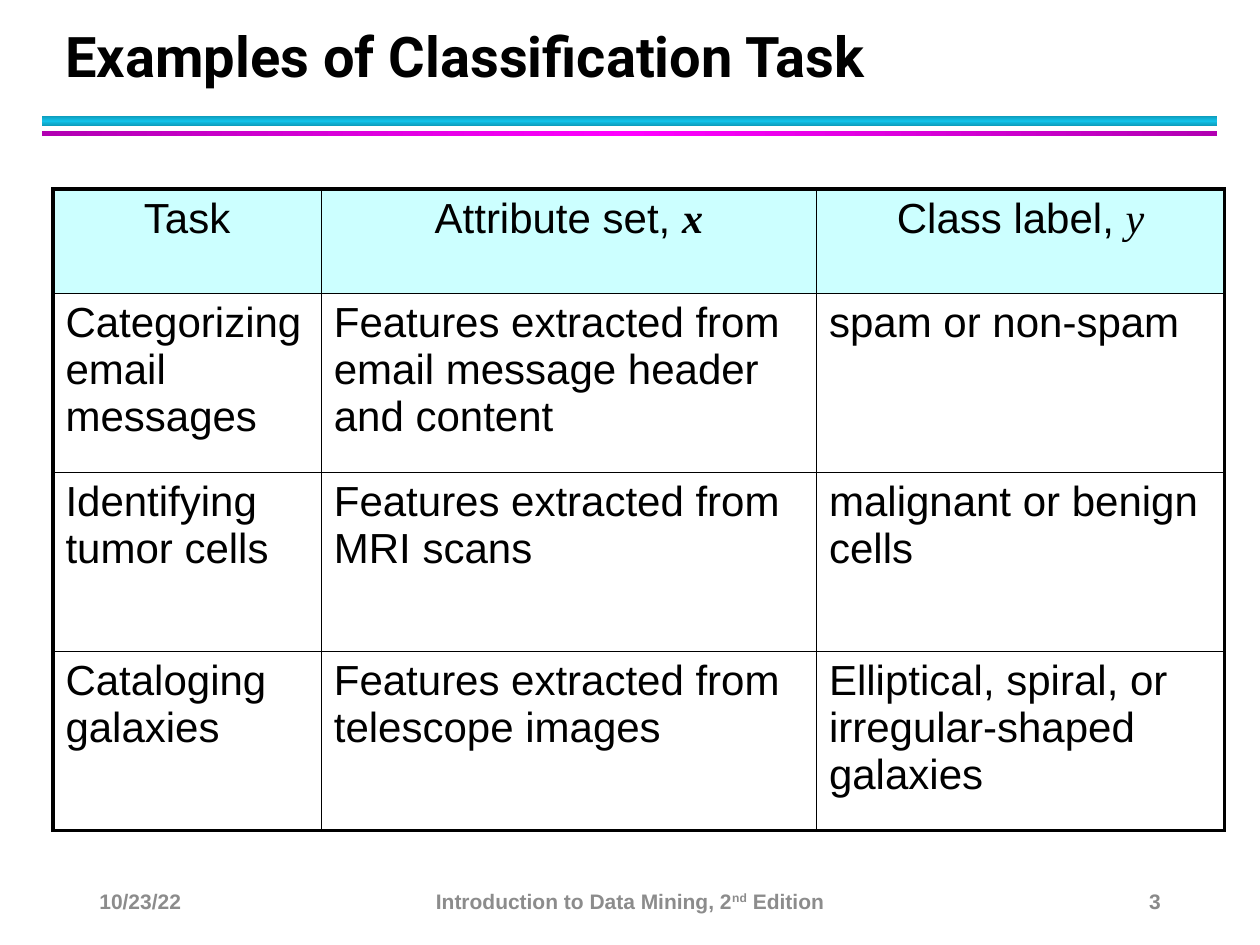
import copy

import pptx
import pptx.dml.color
import pptx.enum.shapes
import pptx.enum.text
import pptx.oxml
import pptx.oxml.ns
import pptx.util

ALIGN = pptx.enum.text.PP_ALIGN
ANCHOR = pptx.enum.text.MSO_ANCHOR
Inches, Pt = pptx.util.Inches, pptx.util.Pt

prs = pptx.Presentation()
prs.slide_width, prs.slide_height = Inches(10), Inches(7.5)
s = prs.slides.add_slide(prs.slide_layouts[6])


def rgb(color):
    return pptx.dml.color.RGBColor.from_string(color)


def add_run(p, text, size, color="000000", font="Arial", bold=False, italic=False):
    r = p.add_run()
    r.text = text
    r.font.size, r.font.name = Pt(size), font
    r.font.bold, r.font.italic = bold, italic
    r.font.color.rgb = rgb(color)
    return r


# Two gradient rules under the title: top, height, edge, middle, angle
for top, height, edge, middle, angle in [
    (0.92, 0.08, "0E9BBA", "12C2E9", 90),
    (1.04, 0.04, "B200B2", "FF00FF", 0),
]:
    sp = s.shapes.add_shape(
        pptx.enum.shapes.MSO_SHAPE.RECTANGLE,
        Inches(0.33), Inches(top), Inches(9.33), Inches(height))
    sp.shadow.inherit = False
    sp.line.fill.background()
    sp.fill.gradient()
    sp.fill.gradient_angle = angle
    stops = sp._element.spPr.find(".//" + pptx.oxml.ns.qn("a:gsLst"))
    stops.append(copy.deepcopy(stops[0]))
    for stop, place, color in zip(sp.fill.gradient_stops, (0, 0.5, 1), (edge, middle, edge)):
        stop.position = place
        stop.color.rgb = rgb(color)

# Title
tf = s.shapes.add_textbox(Inches(0.42), Inches(0.17), Inches(9.06), Inches(0.58)).text_frame
tf.word_wrap = True
tf.vertical_anchor = ANCHOR.BOTTOM
p = tf.paragraphs[0]
p.line_spacing = Pt(36)
add_run(p, "Examples of Classification Task", 32, font="Roboto", bold=True)

# Table: a header row, then one row per task; a symbol follows the header text
header = [("Task", "", False), ("Attribute set, ", "x", True), ("Class label, ", "y", False)]
tasks = [
    ("Categorizing email messages",
     "Features extracted from email message header and content",
     "spam or non-spam"),
    ("Identifying tumor cells",
     "Features extracted from MRI scans",
     "malignant or benign cells"),
    ("Cataloging galaxies",
     "Features extracted from telescope images",
     "Elliptical, spiral, or irregular-shaped galaxies"),
]
widths = [2.13, 3.93, 3.24]
heights = [0.83] + [1.42] * len(tasks)
table = s.shapes.add_table(
    len(heights), len(widths), Inches(0.42), Inches(1.5),
    Inches(sum(widths)), Inches(sum(heights))).table
table.first_row = table.horz_banding = False
for col, width in zip(table.columns, widths):
    col.width = Inches(width)
for row, height in zip(table.rows, heights):
    row.height = Inches(height)

last_row, last_col = len(heights) - 1, len(widths) - 1
for i in range(len(heights)):
    for j in range(len(widths)):
        cell = table.cell(i, j)
        p = cell.text_frame.paragraphs[0]
        p.space_before, p.space_after = Pt(2.4), Pt(4)
        if i == 0:
            cell.fill.solid()
            cell.fill.fore_color.rgb = rgb("CCFFFF")
            p.alignment = ALIGN.CENTER
            text, symbol, bold = header[j]
            add_run(p, text, 24)
            if symbol:
                add_run(p, symbol, 24, font="Times New Roman", bold=bold, italic=True)
        else:
            cell.fill.background()
            add_run(p, tasks[i - 1][j], 24)

        # Thick lines on the outer edge, thin ones inside
        outer = {"lnL": j == 0, "lnR": j == last_col, "lnT": i == 0, "lnB": i == last_row}
        tcPr = cell._tc.get_or_add_tcPr()
        for k, (side, thick) in enumerate(outer.items()):
            tcPr.insert(k, pptx.oxml.parse_xml(
                f'<a:{side} {pptx.oxml.ns.nsdecls("a")} w="{Pt(2.25 if thick else 1)}">'
                f'<a:solidFill><a:srgbClr val="000000"/></a:solidFill></a:{side}>'))

# Footer: date, book, slide number
for left, width, align, color, texts in [
    (0.69, 2.25, ALIGN.LEFT, "8C8C8C", ["10/23/22"]),
    (3.31, 3.38, ALIGN.CENTER, "8C8C8C", ["Introduction to Data Mining, 2", "nd", " Edition"]),
    (7.06, 2.25, ALIGN.RIGHT, "898989", ["3"]),
]:
    tf = s.shapes.add_textbox(Inches(left), Inches(6.95), Inches(width), Inches(0.4)).text_frame
    tf.word_wrap = True
    tf.vertical_anchor = ANCHOR.MIDDLE
    p = tf.paragraphs[0]
    p.alignment = align
    for text in texts:
        r = add_run(p, text, 12, color, bold=True)
        if text == "nd":
            r.font._element.set("baseline", "30000")

prs.save("out.pptx")
